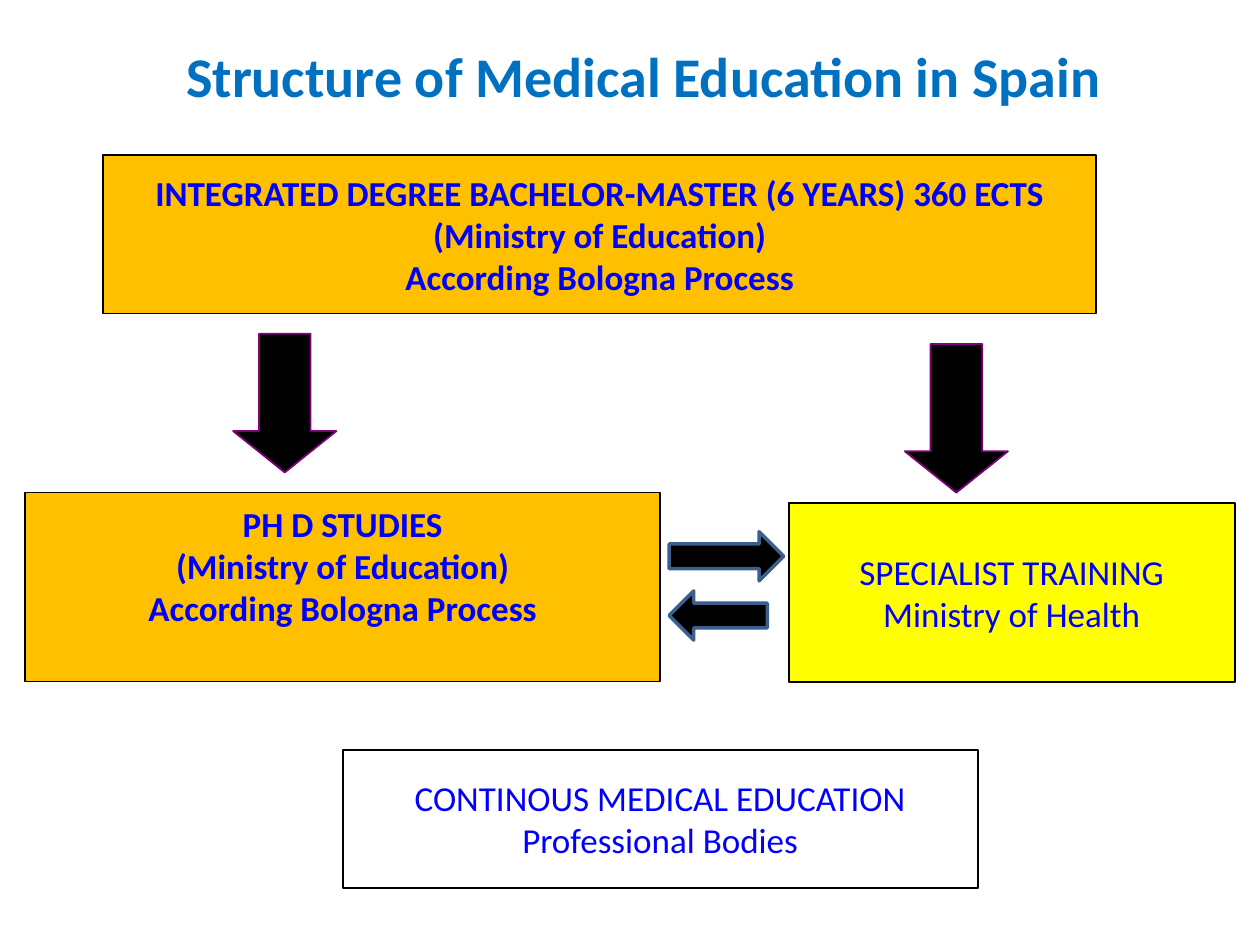
"""Build a slide on the structure of medical education in Spain."""
from pptx import Presentation
from pptx.dml.color import RGBColor
from pptx.enum.shapes import MSO_SHAPE
from pptx.enum.text import MSO_ANCHOR, PP_ALIGN
from pptx.util import Inches, Pt

RECT, DOWN, RIGHT = MSO_SHAPE.RECTANGLE, MSO_SHAPE.DOWN_ARROW, MSO_SHAPE.RIGHT_ARROW
MIDDLE, TOP = MSO_ANCHOR.MIDDLE, MSO_ANCHOR.TOP
CENTER, LEFT = PP_ALIGN.CENTER, PP_ALIGN.LEFT

FONT = "Calibri"
COLORS = {
    "title": "0070C0", "text": "0000FF", "university": "FFC000", "health": "FFFF00",
    "professional": "FFFFFF", "black": "000000", "purple": "800080", "steel": "3A5F8C",
}
TITLE = "Structure of Medical Education in Spain"
TITLE_AREA = (1.38, 0.28, 7.53, 0.64)
UNIVERSITY_LINES = ["(Ministry of Education)", "According Bologna Process"]
STAGES = [
    {"lines": ["INTEGRATED DEGREE BACHELOR-MASTER (6 YEARS) 360 ECTS", *UNIVERSITY_LINES],
     "area": (0.82, 1.23, 7.88, 1.26), "fill": "university", "bold": True},
    {"lines": ["PH D STUDIES", *UNIVERSITY_LINES],
     "area": (0.2, 3.91, 5.04, 1.5), "fill": "university", "bold": True, "bottom": 0.39},
    {"lines": ["SPECIALIST TRAINING", "Ministry of Health"],
     "area": (6.26, 3.99, 3.54, 1.42), "fill": "health"},
    {"lines": ["CONTINOUS MEDICAL EDUCATION", "Professional Bodies"],
     "area": (2.72, 5.95, 5.04, 1.1), "fill": "professional"},
]
DEGREE_ARROWS = [(1.85, 2.65, 0.82, 1.1), (7.18, 2.73, 0.82, 1.18)]
EXCHANGE_ARROWS = [((5.31, 4.22, 0.91, 0.39), 0), ((5.31, 4.69, 0.78, 0.39), 180)]


def rgb(name):
    return RGBColor.from_string(COLORS[name])


def add_block(slide, kind, area, fill, line, width=1):
    block = slide.shapes.add_shape(kind, *map(Inches, area))
    block.shadow.inherit = False
    block.fill.solid()
    block.fill.fore_color.rgb = rgb(fill)
    block.line.color.rgb = rgb(line)
    block.line.width = Pt(width)
    return block


def write(holder, lines, size=20, color="text", bold=False, align=CENTER,
          anchor=MIDDLE, bottom=0.05):
    frame = holder.text_frame
    frame.word_wrap = False
    frame.vertical_anchor = anchor
    frame.margin_bottom = Inches(bottom)
    frame.text = "\n".join(lines)
    for paragraph in frame.paragraphs:
        paragraph.alignment = align
        for run in paragraph.runs:
            run.font.name = FONT
            run.font.size = Pt(size)
            run.font.bold = bold
            run.font.color.rgb = rgb(color)


def main():
    deck = Presentation()
    deck.slide_width, deck.slide_height = Inches(10), Inches(7.5)
    slide = deck.slides.add_slide(deck.slide_layouts[6])

    for stage in STAGES:
        box = add_block(slide, RECT, stage["area"], stage["fill"], "black")
        write(box, stage["lines"], bold=stage.get("bold", False),
              bottom=stage.get("bottom", 0.05))

    for area in DEGREE_ARROWS:
        arrow = add_block(slide, DOWN, area, "black", "purple")
        arrow.adjustments[1] = 0.4

    for area, rotation in EXCHANGE_ARROWS:
        arrow = add_block(slide, RIGHT, area, "black", "steel", width=2)
        arrow.rotation = rotation

    title = slide.shapes.add_textbox(*map(Inches, TITLE_AREA))
    write(title, [TITLE], size=32, color="title", bold=True, align=LEFT, anchor=TOP)
    deck.save("out.pptx")


if __name__ == "__main__":
    main()
